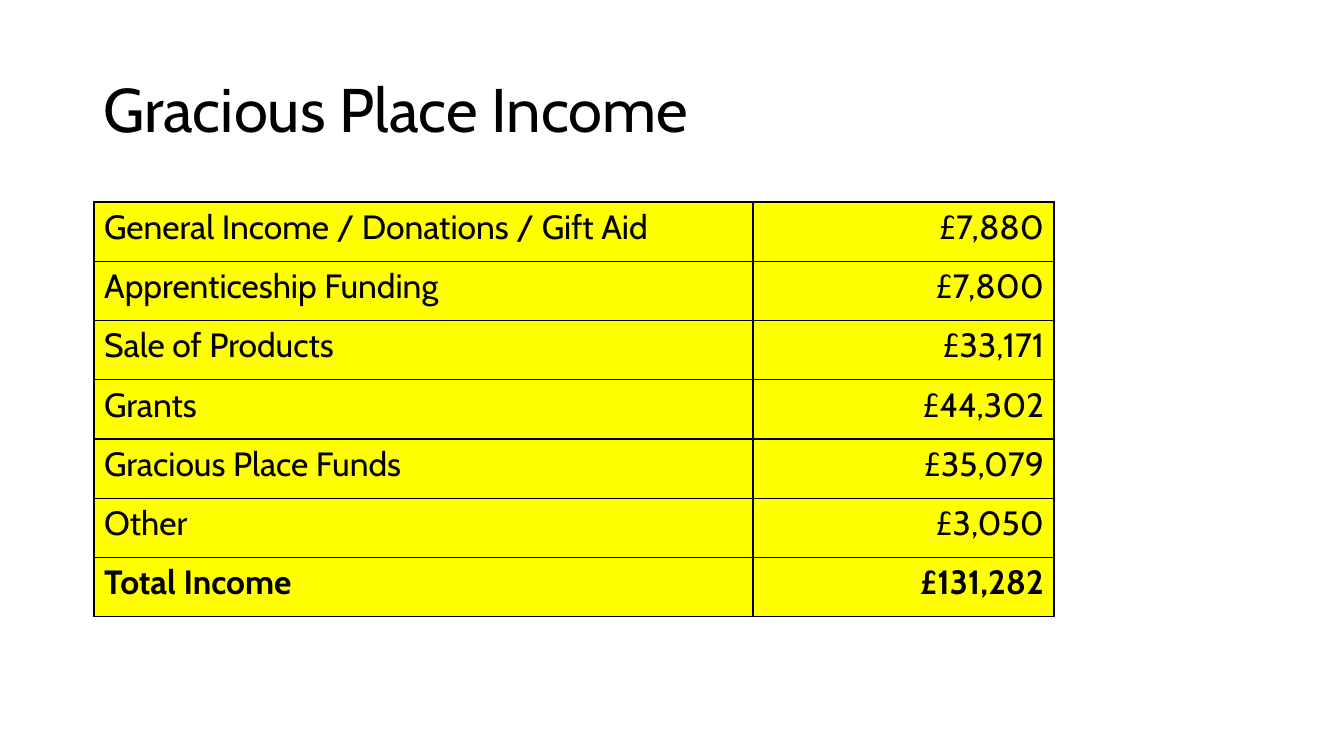
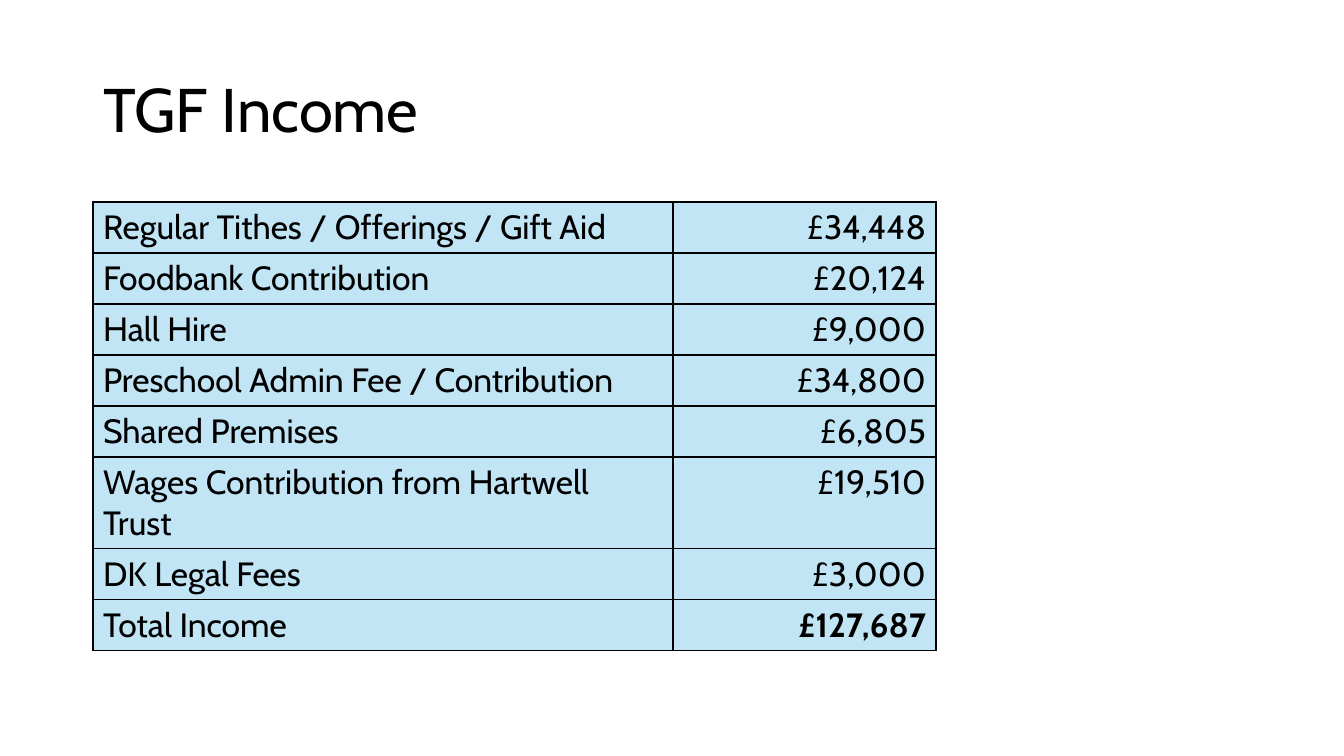
from dataclasses import dataclass

from lxml import etree
from pptx import Presentation
from pptx import util as u
from pptx.dml.color import RGBColor
from pptx.enum import text
from pptx.oxml import ns

EMU_PER_PX = 914400 / 100.8
FONT = "Cabin"
COLOURS = {"ink": "000000", "yellow": "FFFF00", "sky": "C1E5F5"}
TITLE_BOX = (93, 40, 1159, 146)
TABLE_TOP = 202


@dataclass(frozen=True)
class IncomeSlide:
    title: str
    fill: str
    left: int
    columns: tuple[int, int]
    height: int
    items: tuple[tuple[str, int], ...]
    bold_total_label: bool


INCOME_SLIDES = (
    IncomeSlide(
        "Gracious Place Income", "yellow", 94, (659, 301), 415,
        (
            ("General Income / Donations / Gift Aid", 7880),
            ("Apprenticeship Funding", 7800),
            ("Sale of Products", 33171),
            ("Grants", 44302),
            ("Gracious Place Funds", 35079),
            ("Other", 3050),
        ),
        bold_total_label=True,
    ),
    IncomeSlide(
        "TGF Income", "sky", 93, (580, 263), 408,
        (
            ("Regular Tithes / Offerings / Gift Aid", 34448),
            ("Foodbank Contribution", 20124),
            ("Hall Hire", 9000),
            ("Preschool Admin Fee / Contribution", 34800),
            ("Shared Premises", 6805),
            ("Wages Contribution from Hartwell Trust", 19510),
            ("DK Legal Fees", 3000),
        ),
        bold_total_label=False,
    ),
)


def px(length: float) -> u.Emu:
    return u.Emu(round(length * EMU_PER_PX))


def colour(name: str) -> RGBColor:
    return RGBColor.from_string(COLOURS[name])


def style_paragraph(paragraph, size: int, bold: bool = False) -> None:
    font = paragraph.font
    font.name, font.size, font.bold = FONT, u.Pt(size), bold
    font.color.rgb = colour("ink")


def add_title(slide, words: str) -> None:
    title = slide.shapes.title
    title.left, title.top, title.width, title.height = map(px, TITLE_BOX)
    frame = title.text_frame
    frame.text = words
    frame.word_wrap = True
    frame.vertical_anchor = text.MSO_ANCHOR.MIDDLE
    paragraph = frame.paragraphs[0]
    paragraph.alignment = text.PP_ALIGN.LEFT
    paragraph.line_spacing = 0.9
    style_paragraph(paragraph, 44)


def add_borders(cell) -> None:
    properties = cell._tc.get_or_add_tcPr()
    for position, side in enumerate(("lnL", "lnR", "lnT", "lnB")):
        line = etree.Element(ns.qn(f"a:{side}"), w=str(u.Pt(1)))
        fill = etree.SubElement(line, ns.qn("a:solidFill"))
        etree.SubElement(fill, ns.qn("a:srgbClr"), val=COLOURS["ink"])
        properties.insert(position, line)


def fill_cell(cell, words: str, fill: str, align, bold: bool) -> None:
    cell.text = words
    cell.fill.solid()
    cell.fill.fore_color.rgb = colour(fill)
    add_borders(cell)
    paragraph = cell.text_frame.paragraphs[0]
    paragraph.alignment = align
    style_paragraph(paragraph, 24, bold)


def add_income_table(slide, income: IncomeSlide) -> None:
    total = sum(amount for _, amount in income.items)
    rows = (*income.items, ("Total Income", total))
    table = slide.shapes.add_table(
        len(rows), 2, px(income.left), px(TABLE_TOP),
        px(sum(income.columns)), px(income.height),
    ).table
    table.first_row = table.horz_banding = False
    for column, width in zip(table.columns, income.columns):
        column.width = px(width)
    for index, (label, amount) in enumerate(rows):
        table.rows[index].height = px(income.height / len(rows))
        is_total = index == len(income.items)
        fill_cell(table.cell(index, 0), label, income.fill,
                  text.PP_ALIGN.LEFT, is_total and income.bold_total_label)
        fill_cell(table.cell(index, 1), f"£{amount:,}", income.fill,
                  text.PP_ALIGN.RIGHT, is_total)


def main() -> None:
    deck = Presentation()
    deck.slide_width, deck.slide_height = px(1344), px(756)
    title_only = deck.slide_layouts[5]
    for income in INCOME_SLIDES:
        slide = deck.slides.add_slide(title_only)
        add_title(slide, income.title)
        add_income_table(slide, income)
    deck.save("out.pptx")


if __name__ == "__main__":
    main()
